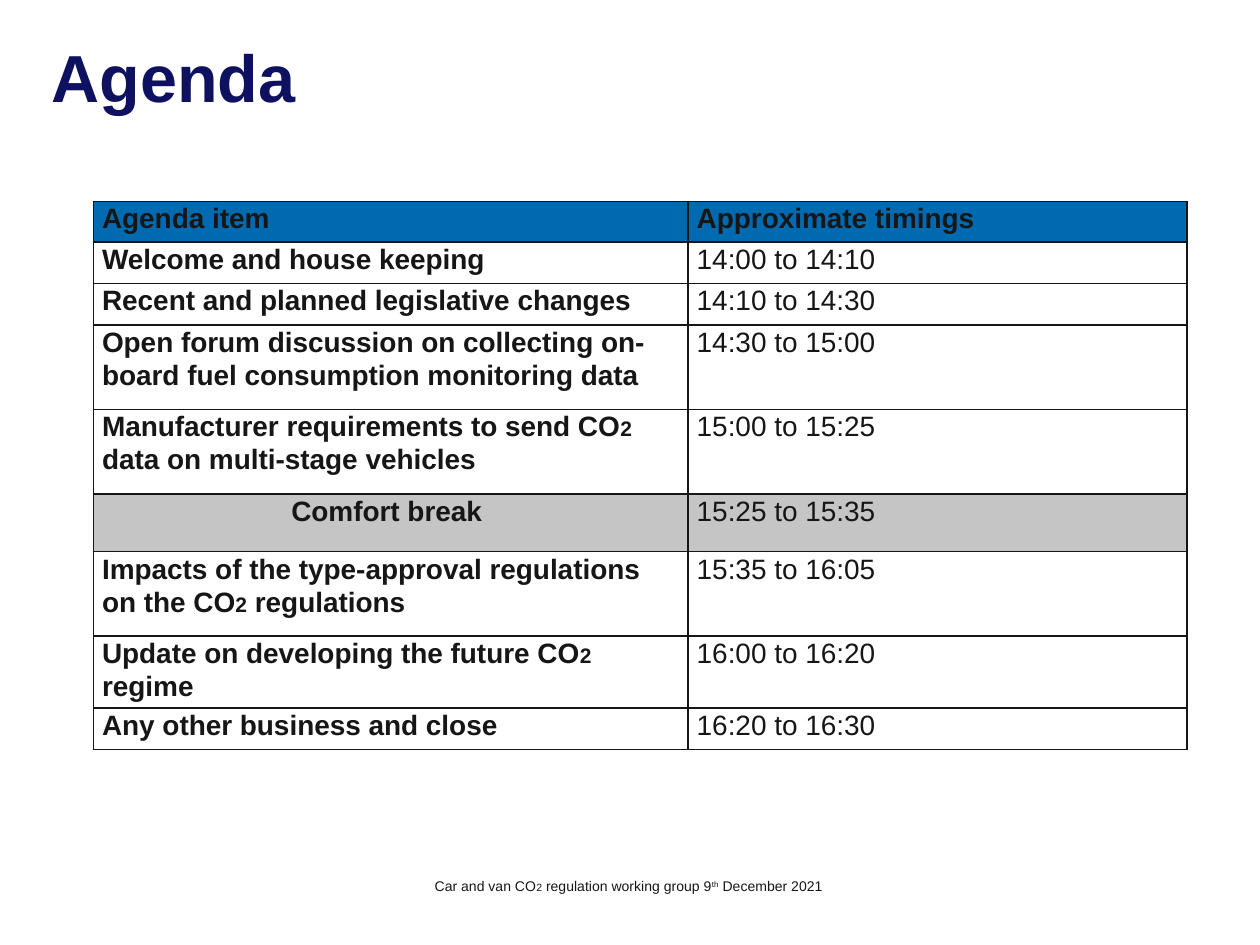
from dataclasses import dataclass

from lxml.etree import SubElement
from pptx import Presentation
from pptx.dml.color import RGBColor as RGB
from pptx.enum.text import MSO_ANCHOR as Anchor, PP_ALIGN as Align
from pptx.oxml.ns import qn
from pptx.util import Inches, Pt


@dataclass(frozen=True)
class Theme:
    font: str = "Arial"
    ink: str = "161616"
    navy: str = "0E115F"
    blue: str = "006AB0"
    grey: str = "C5C5C5"
    white: str = "FFFFFF"
    title: float = 38
    body: float = 16
    body_sub: float = 12
    foot: float = 8
    foot_sub: float = 6


@dataclass(frozen=True)
class Piece:
    text: str
    size: float
    raised: bool = False


@dataclass(frozen=True)
class Row:
    item: str
    time: str
    height: float = 0.33
    fill: str = Theme.white
    head: bool = False
    align: Align = Align.LEFT


ROWS = [
    Row("Agenda item", "Approximate timings", 0.32, Theme.blue, head=True),
    Row("Welcome and house keeping", "14:00 to 14:10"),
    Row("Recent and planned legislative changes", "14:10 to 14:30"),
    Row("Open forum discussion on collecting on-board fuel consumption "
        "monitoring data", "14:30 to 15:00", 0.67),
    Row("Manufacturer requirements to send CO2 data on multi-stage vehicles",
        "15:00 to 15:25", 0.67),
    Row("Comfort break ", "15:25 to 15:35", 0.46, Theme.grey, align=Align.CENTER),
    Row("Impacts of the type-approval regulations on the CO2 regulations",
        "15:35 to 16:05", 0.67),
    Row("Update on developing the future CO2 regime", "16:00 to 16:20"),
    Row("Any other business and close", "16:20 to 16:30"),
]
COLS = (4.72, 3.96)


def split(text: str, size: float, sub: float) -> list[Piece]:
    """Give the 2 of CO2 the smaller size."""
    lead, mark, rest = text.partition("CO2")
    if not mark:
        return [Piece(text, size)]
    return [Piece(lead + "CO", size), Piece("2", sub), Piece(rest, size)]


def write(para, pieces: list[Piece], color: str = Theme.ink, bold: bool = False) -> None:
    for piece in pieces:
        run = para.add_run()
        run.text = piece.text
        font = run.font
        font.name, font.size, font.bold = Theme.font, Pt(piece.size), bold
        font.color.rgb = RGB.from_string(color)
        if piece.raised:
            run.font._element.set("baseline", "30000")


def add_box(slide, left: float, top: float, width: float, height: float):
    """Add a wrapping text box without margins and return its frame."""
    frame = slide.shapes.add_textbox(
        Inches(left), Inches(top), Inches(width), Inches(height)).text_frame
    frame.word_wrap = True
    frame.margin_left = frame.margin_right = 0
    frame.margin_top = frame.margin_bottom = 0
    return frame


def set_edges(cell) -> None:
    props = cell._tc.get_or_add_tcPr()
    for at, side in enumerate(("lnL", "lnR", "lnT", "lnB")):
        line = SubElement(props, qn(f"a:{side}"), w=str(Pt(1)))
        fill = SubElement(line, qn("a:solidFill"))
        SubElement(fill, qn("a:srgbClr"), val=Theme.ink)
        props.insert(at, line)


def fill_cell(cell, text: str, row: Row, bold: bool, align: Align) -> None:
    cell.fill.solid()
    cell.fill.fore_color.rgb = RGB.from_string(row.fill)
    cell.margin_left = cell.margin_right = Inches(0.07)
    cell.margin_top = cell.margin_bottom = 0
    para = cell.text_frame.paragraphs[0]
    para.alignment, para.line_spacing, para.space_after = align, 1.07, Pt(8)
    write(para, split(text, Theme.body, Theme.body_sub), bold=bold)
    set_edges(cell)


def add_agenda(slide) -> None:
    table = slide.shapes.add_table(
        len(ROWS), len(COLS), Inches(0.74), Inches(1.6),
        Inches(sum(COLS)), Inches(sum(row.height for row in ROWS))).table
    for col, width in zip(table.columns, COLS):
        col.width = Inches(width)
    for at, row in enumerate(ROWS):
        table.rows[at].height = Inches(row.height)
        fill_cell(table.cell(at, 0), row.item, row, True, row.align)
        fill_cell(table.cell(at, 1), row.time, row, row.head, Align.LEFT)


def main() -> None:
    deck = Presentation()
    deck.slide_width, deck.slide_height = Inches(10), Inches(7.5)
    slide = deck.slides.add_slide(deck.slide_layouts[6])

    title = add_box(slide, 0.41, 0.36, 9.2, 1.37).paragraphs[0]
    title.line_spacing = 0.9
    write(title, [Piece("Agenda", Theme.title)], Theme.navy, bold=True)

    add_agenda(slide)

    frame = add_box(slide, 2.91, 6.93, 4.19, 0.2)
    frame.vertical_anchor = Anchor.MIDDLE
    foot = frame.paragraphs[0]
    foot.alignment = Align.CENTER
    write(foot, [
        *split("Car and van CO2 regulation working group 9", Theme.foot, Theme.foot_sub),
        Piece("th", Theme.foot, raised=True),
        Piece(" December 2021 ", Theme.foot),
    ])
    deck.save("out.pptx")


if __name__ == "__main__":
    main()
